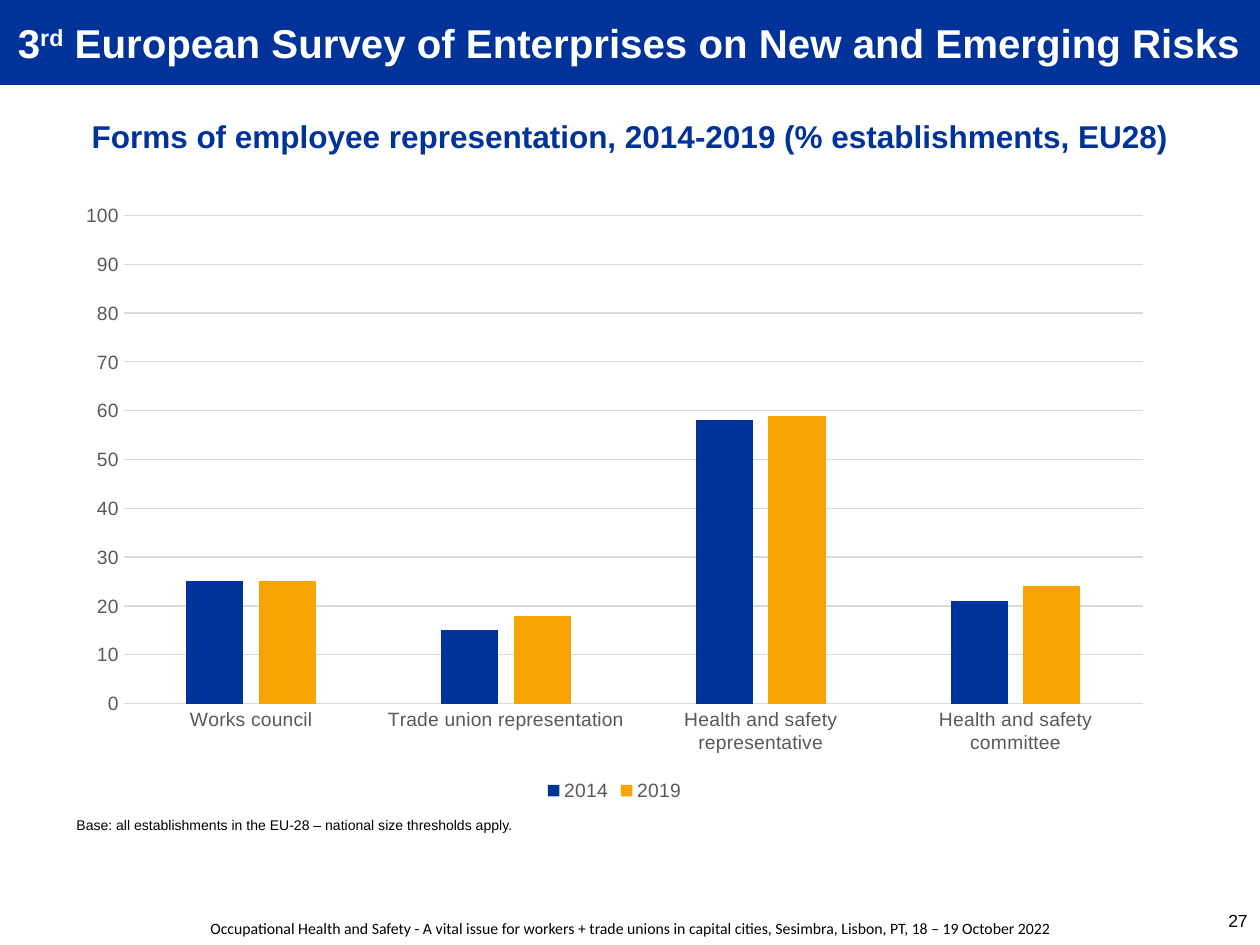
from dataclasses import dataclass

from pptx import Presentation
from pptx import util as u
from pptx.chart import data as chart_data
from pptx.dml import color
from pptx.enum import chart as charts, shapes, text

PX = 914400 / 126  # EMU in one px


@dataclass(frozen=True)
class Theme:
    blue: str = "003399"
    orange: str = "F6A400"
    white: str = "FFFFFF"
    black: str = "000000"
    label: str = "595959"
    grid: str = "D9D9D9"
    banner_size: int = 23
    title_size: int = 18
    chart_size: int = 11
    number_size: int = 10
    footer_size: int = 9
    note_size: int = 8
    font: str = "Arial"
    footer_font: str = "Calibri"


def px(*lengths):
    return [u.Emu(round(length * PX)) for length in lengths]


def rgb(value):
    return color.RGBColor.from_string(value)


def style_font(font, size, ink, name, bold=False):
    font.size, font.name, font.bold = u.Pt(size), name, bold
    font.color.rgb = rgb(ink)


def write(box, *parts, size, ink, name, bold=False, raised=(),
          align=text.PP_ALIGN.CENTER, anchor=text.MSO_ANCHOR.MIDDLE):
    """Write one paragraph; parts listed in raised become superscript."""
    frame = box.text_frame
    frame.word_wrap = True
    frame.vertical_anchor = anchor
    para = frame.paragraphs[0]
    para.alignment = align
    for part in parts:
        span = para.add_run()
        span.text = part
        style_font(span.font, size, ink, name, bold)
        if part in raised:
            span.font._element.set("baseline", "30000")


class SlideBuilder:
    def __init__(self, deck, theme):
        self.theme = theme
        self.page = deck.slides.add_slide(deck.slide_layouts[6])

    def label(self, place, *parts, **style):
        write(self.page.shapes.add_textbox(*px(*place)), *parts, **style)

    def banner(self, place, *parts, **style):
        box = self.page.shapes.add_shape(shapes.MSO_SHAPE.RECTANGLE, *px(*place))
        box.shadow.inherit = False
        box.fill.solid()
        box.fill.fore_color.rgb = rgb(self.theme.blue)
        box.line.fill.background()
        frame = box.text_frame
        frame.margin_left = frame.margin_right = 0
        write(box, *parts, **style)

    def columns(self, place, categories, series):
        theme = self.theme
        source = chart_data.CategoryChartData()
        source.categories = categories
        for name, values, _ in series:
            source.add_series(name, values)
        chart = self.page.shapes.add_chart(
            charts.XL_CHART_TYPE.COLUMN_CLUSTERED, *px(*place), source).chart
        style_font(chart.font, theme.chart_size, theme.label, theme.font)
        chart.has_title = False

        # Bars
        plot = chart.plots[0]
        plot.gap_width, plot.overlap, plot.vary_by_categories = 219, -27, False
        for bars, (_, _, fill) in zip(plot.series, series):
            bars.format.fill.solid()
            bars.format.fill.fore_color.rgb = rgb(fill)

        # Axes and gridlines
        values, names = chart.value_axis, chart.category_axis
        values.minimum_scale, values.maximum_scale, values.major_unit = 0, 100, 10
        for axis in (values, names):
            axis.major_tick_mark = axis.minor_tick_mark = charts.XL_TICK_MARK.NONE
            style_font(axis.tick_labels.font, theme.chart_size, theme.label, theme.font)
        values.has_major_gridlines = True
        for line in (values.major_gridlines.format.line, names.format.line):
            line.color.rgb = rgb(theme.grid)
            line.width = u.Pt(0.75)
        values.format.line.fill.background()

        # Legend
        chart.has_legend = True
        chart.legend.position = charts.XL_LEGEND_POSITION.BOTTOM
        chart.legend.include_in_layout = False
        style_font(chart.legend.font, theme.chart_size, theme.label, theme.font)


def main():
    theme = Theme()
    deck = Presentation()
    deck.slide_width, deck.slide_height = px(1260, 945)
    slide = SlideBuilder(deck, theme)

    # Page number and footer
    slide.label((1176, 896, 84, 50), "27", size=theme.number_size,
                ink=theme.black, name=theme.font, align=text.PP_ALIGN.RIGHT)
    slide.label((0, 911, 1260, 34),
                "Occupational Health and Safety - A vital issue for workers + trade unions "
                "in capital cities, Sesimbra, Lisbon, PT, 18 – 19 October 2022",
                size=theme.footer_size, ink=theme.black, name=theme.footer_font)

    # Heading
    slide.label((0, 102, 1260, 67),
                "Forms of employee representation, 2014-2019 (% establishments, EU28)",
                size=theme.title_size, ink=theme.blue, name=theme.font, bold=True)

    # Chart and its base note
    slide.columns((64, 192, 1101, 615),
                  ["Works council", "Trade union representation",
                   "Health and safety representative", "Health and safety committee"],
                  [("2014", (25, 15, 58, 21), theme.blue),
                   ("2019", (25, 18, 59, 24), theme.orange)])
    slide.label((64, 810, 1052, 30),
                "Base: all establishments in the EU-28 – national size thresholds apply.",
                size=theme.note_size, ink=theme.black, name=theme.font,
                align=text.PP_ALIGN.JUSTIFY, anchor=text.MSO_ANCHOR.TOP)

    # Banner
    slide.banner((0, 0, 1260, 85), "3", "rd",
                 " European Survey of Enterprises on New and Emerging Risks",
                 raised=("rd",), size=theme.banner_size, ink=theme.white,
                 name=theme.font, bold=True)

    deck.save("out.pptx")


if __name__ == "__main__":
    main()
